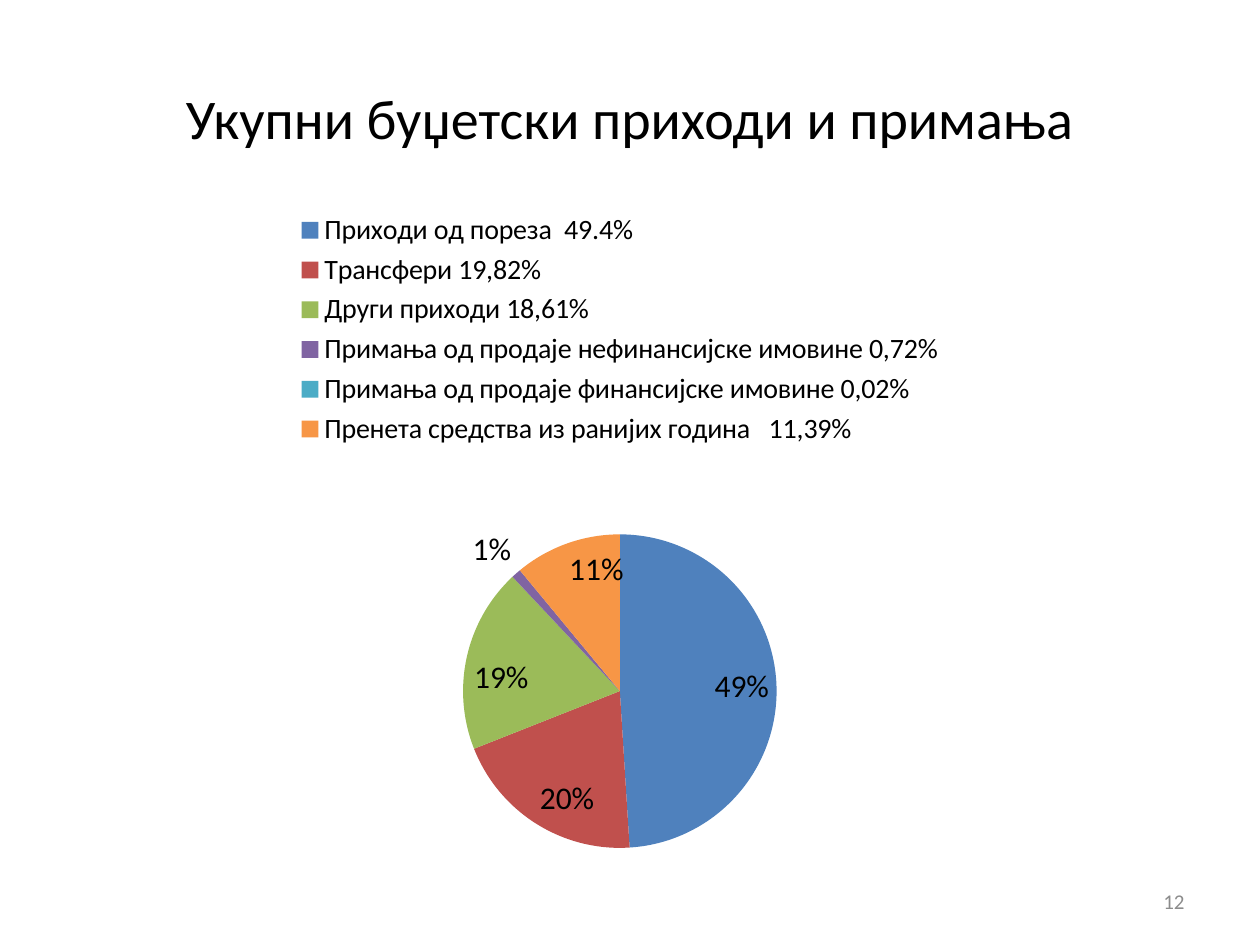
from lxml import etree
from pptx import Presentation, util as u
from pptx.chart.data import CategoryChartData
from pptx.dml.color import RGBColor
from pptx.enum import chart as ch, text
from pptx.oxml import ns

BLACK = RGBColor(0, 0, 0)
GREY = RGBColor(0x8C, 0x8C, 0x8C)
FONT = "Calibri"
WIDTH, HEIGHT = u.Inches(10), u.Inches(7.5)

# Source of income, share in percent, slice colour
INCOME = [
    ("Приходи од пореза  49.4%", 49, RGBColor(0x4F, 0x81, 0xBD)),
    ("Трансфери 19,82%", 20, RGBColor(0xC0, 0x50, 0x4D)),
    ("Други приходи 18,61%", 19, RGBColor(0x9B, 0xBB, 0x59)),
    ("Примања од продаје нефинансијске имовине 0,72%", 1, RGBColor(0x80, 0x64, 0xA2)),
    ("Примања од продаје финансијске имовине 0,02%", 0, RGBColor(0x4B, 0xAC, 0xC6)),
    ("Пренета средства из ранијих година   11,39%", 11, RGBColor(0xF7, 0x96, 0x46)),
]
# Tiny slices have labels outside; the offsets are shares of the chart
OUTSIDE_LABELS = {3: (0, 0), 4: (0.02, -0.04)}


def share_box(left, top, width, height):
    """Turn shares of the slide into a box."""
    return (int(left * WIDTH), int(top * HEIGHT),
            int(width * WIDTH), int(height * HEIGHT))


def style_font(font, size, color=BLACK):
    font.name, font.size = FONT, u.Pt(size)
    font.color.rgb = color


def add_text(slide, box, words, size, color=BLACK, align=text.PP_ALIGN.CENTER):
    frame = slide.shapes.add_textbox(*box).text_frame
    frame.word_wrap = True
    frame.vertical_anchor = text.MSO_ANCHOR.MIDDLE
    line = frame.paragraphs[0]
    line.alignment = align
    run = line.add_run()
    run.text = words
    style_font(run.font, size, color)


def set_layout(layout, **values):
    """Write a manual chart layout."""
    for old in list(layout):
        layout.remove(old)
    manual = etree.SubElement(layout, ns.qn("c:manualLayout"))
    for tag, value in values.items():
        etree.SubElement(manual, ns.qn(f"c:{tag}")).set("val", str(value))


def add_layout(parent, position, **values):
    layout = parent.find(ns.qn("c:layout"))
    if layout is None:
        layout = etree.Element(ns.qn("c:layout"))
        parent.insert(position, layout)
    set_layout(layout, **values)


def add_income_pie(slide, box):
    names, shares, colors = zip(*INCOME)
    data = CategoryChartData()
    data.categories = names
    data.add_series("Series 1", shares)
    chart = slide.shapes.add_chart(ch.XL_CHART_TYPE.PIE, *box, data).chart
    style_font(chart.font, 18)
    chart.has_title = False

    # Legend above the pie
    chart.has_legend = True
    chart.legend.position = ch.XL_LEGEND_POSITION.TOP
    chart.legend.include_in_layout = False
    style_font(chart.legend.font, 16)

    # Slices
    plot = chart.plots[0]
    plot.vary_by_categories = True
    series = plot.series[0]
    for index, color in enumerate(colors):
        fill = series.points[index].format.fill
        fill.solid()
        fill.fore_color.rgb = color

    # Percent labels
    labels = series.data_labels
    labels.show_percentage, labels.show_value = True, False
    labels.number_format, labels.number_format_is_linked = "0%", False
    labels.position = ch.XL_LABEL_POSITION.INSIDE_END
    style_font(labels.font, 18)
    for index, (dx, dy) in OUTSIDE_LABELS.items():
        label = series.points[index].data_label
        style_font(label.font, 18)
        label.position = ch.XL_LABEL_POSITION.OUTSIDE_END
    for label in series._element.iter(ns.qn("c:dLbl")):
        label.find(ns.qn("c:showVal")).set("val", "0")
        label.find(ns.qn("c:showPercent")).set("val", "1")
        dx, dy = OUTSIDE_LABELS[int(label.find(ns.qn("c:idx")).get("val"))]
        if dx or dy:
            add_layout(label, 1, x=dx, y=dy)

    # Pie area in the lower half
    plot_area = chart._chartSpace.find(".//" + ns.qn("c:plotArea"))
    add_layout(plot_area, 0, layoutTarget="inner", xMode="edge", yMode="edge",
               x=0.01, y=0.45, w=0.98, h=0.42)


def build_slide(deck):
    slide = deck.slides.add_slide(deck.slide_layouts[6])
    add_text(slide, share_box(0.05, 0.04, 0.9, 0.167),
             "Укупни буџетски приходи и примања", 32)
    add_income_pie(slide, share_box(0.042, 0.21, 0.9, 0.79))
    # Slide number
    add_text(slide, share_box(0.717, 0.927, 0.233, 0.053), "12", 12,
             color=GREY, align=text.PP_ALIGN.RIGHT)


def main():
    deck = Presentation()
    deck.slide_width, deck.slide_height = WIDTH, HEIGHT
    build_slide(deck)
    deck.save("out.pptx")


if __name__ == "__main__":
    main()
